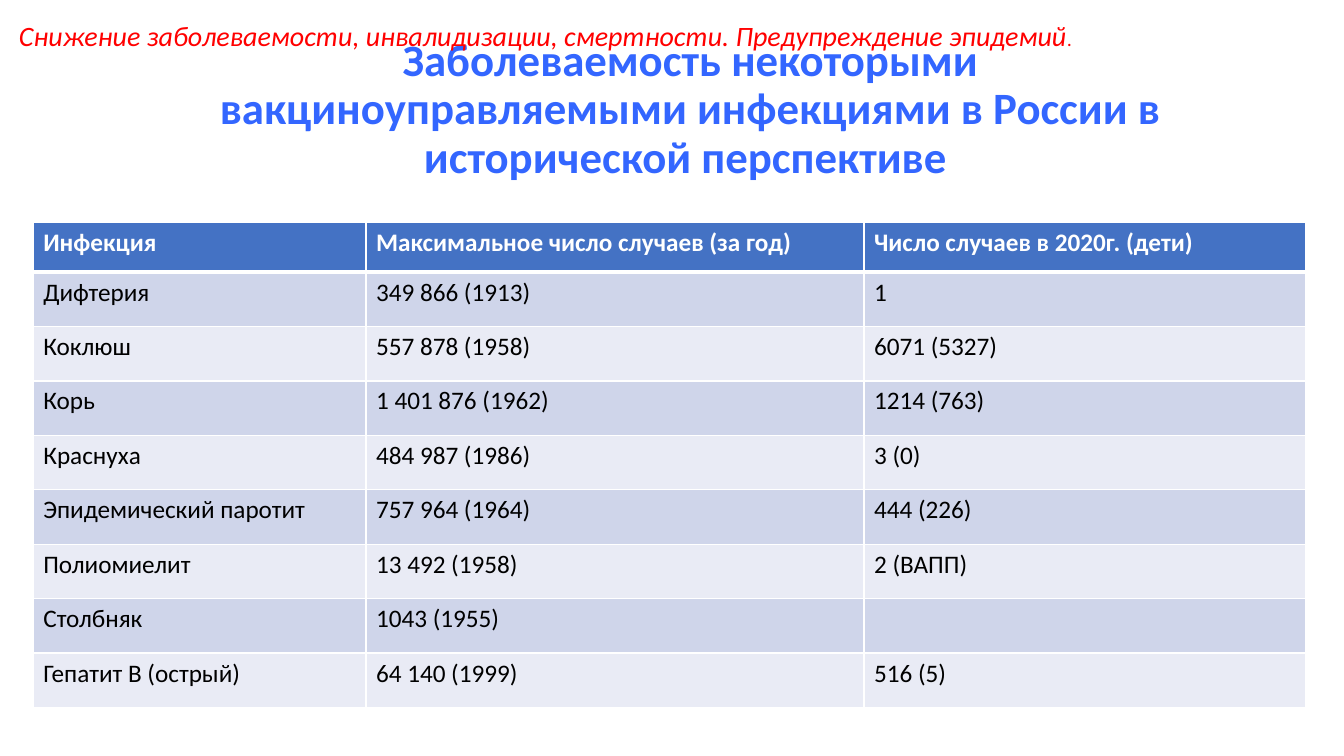
from lxml.etree import SubElement
from pptx import Presentation
from pptx.dml.color import RGBColor
from pptx.enum.text import MSO_ANCHOR, MSO_AUTO_SIZE, PP_ALIGN
from pptx.oxml.ns import qn
from pptx.util import Pt

EMU_PER_PX = 9144  # 100 px to the inch

TITLE = ("Заболеваемость некоторыми вакциноуправляемыми инфекциями "
         "в России в исторической перспективе ")
GOAL = "Снижение заболеваемости, инвалидизации, смертности. Предупреждение эпидемий"
COLUMN_WIDTHS = [330, 494, 438]
HEADER_HEIGHT, ROW_HEIGHT = 49, 54
INFECTIONS = [
    ("Инфекция", "Максимальное число случаев (за год)", "Число случаев в 2020г. (дети)"),
    ("Дифтерия", "349 866 (1913)", "1"),
    ("Коклюш", "557 878 (1958)", "6071 (5327)"),
    ("Корь", "1 401 876 (1962)", "1214 (763)"),
    ("Краснуха", "484 987 (1986)", "3 (0)"),
    ("Эпидемический паротит", "757 964 (1964)", "444 (226)"),
    ("Полиомиелит", "13 492 (1958)", "2 (ВАПП)"),
    ("Столбняк", "1043 (1955)", ""),
    ("Гепатит В (острый)", "64 140 (1999)", "516 (5)"),
]


def px(length):
    return length * EMU_PER_PX


def color(hex_string):
    return RGBColor.from_string(hex_string)


class SlideBuilder:
    font = "Calibri"
    title_color, goal_color = "3366FF", "FF0000"
    header_fill, band_fills = "4472C4", ("E9EBF5", "CFD5EA")
    header_text, body_text, border_color = "FFFFFF", "000000", "FFFFFF"

    def __init__(self, presentation):
        self.slide = presentation.slides.add_slide(presentation.slide_layouts[5])

    def add_run(self, paragraph, text, size, hex_string, bold=False, italic=False):
        run = paragraph.add_run()
        run.text = text
        font = run.font
        font.name, font.size = self.font, Pt(size)
        font.bold, font.italic = bold, italic
        font.color.rgb = color(hex_string)

    def set_title(self, text, left, top, width, height):
        title = self.slide.shapes.title
        title.left, title.top = px(left), px(top)
        title.width, title.height = px(width), px(height)
        frame = title.text_frame
        frame.auto_size = MSO_AUTO_SIZE.NONE
        frame.vertical_anchor = MSO_ANCHOR.MIDDLE
        paragraph = frame.paragraphs[0]
        paragraph.alignment = PP_ALIGN.CENTER
        paragraph.line_spacing = 0.9
        self.add_run(paragraph, text, 32, self.title_color, bold=True)

    def add_text(self, runs, left, top, width, height):
        """Add a one-paragraph text box from (text, size) pairs."""
        box = self.slide.shapes.add_textbox(px(left), px(top), px(width), px(height))
        frame = box.text_frame
        frame.word_wrap = True
        frame.auto_size = MSO_AUTO_SIZE.SHAPE_TO_FIT_TEXT
        for text, size in runs:
            self.add_run(frame.paragraphs[0], text, size, self.goal_color, italic=True)

    def set_borders(self, cell, top, bottom):
        """Draw the four borders; top and bottom are widths in points."""
        properties = cell._tc.get_or_add_tcPr()
        for side, width in (("L", 1), ("R", 1), ("T", top), ("B", bottom)):
            line = SubElement(properties, qn(f"a:ln{side}"), w=str(Pt(width)))
            fill = SubElement(line, qn("a:solidFill"))
            SubElement(fill, qn("a:srgbClr"), val=self.border_color)

    def add_table(self, rows, left, top):
        height = HEADER_HEIGHT + ROW_HEIGHT * (len(rows) - 1)
        table = self.slide.shapes.add_table(
            len(rows), len(COLUMN_WIDTHS), px(left), px(top),
            px(sum(COLUMN_WIDTHS)), px(height)).table
        for column, width in zip(table.columns, COLUMN_WIDTHS):
            column.width = px(width)
        for index, texts in enumerate(rows):
            header = index == 0
            table.rows[index].height = px(HEADER_HEIGHT if header else ROW_HEIGHT)
            fill = self.header_fill if header else self.band_fills[index % 2]
            text_color = self.header_text if header else self.body_text
            for cell, text in zip(table.rows[index].cells, texts):
                self.set_borders(cell, top=3 if index == 1 else 1, bottom=3 if header else 1)
                cell.fill.solid()
                cell.fill.fore_color.rgb = color(fill)
                if text:
                    paragraph = cell.text_frame.paragraphs[0]
                    self.add_run(paragraph, text, 18, text_color, bold=header)


def main():
    presentation = Presentation()
    presentation.slide_width, presentation.slide_height = px(1333), px(750)
    builder = SlideBuilder(presentation)
    builder.set_title(TITLE, 160, 57, 1050, 105)
    builder.add_table(INFECTIONS, 33, 221)
    builder.add_text([(GOAL, 20), (".", 14)], 9, 13, 1096, 44)
    presentation.save("out.pptx")


if __name__ == "__main__":
    main()
